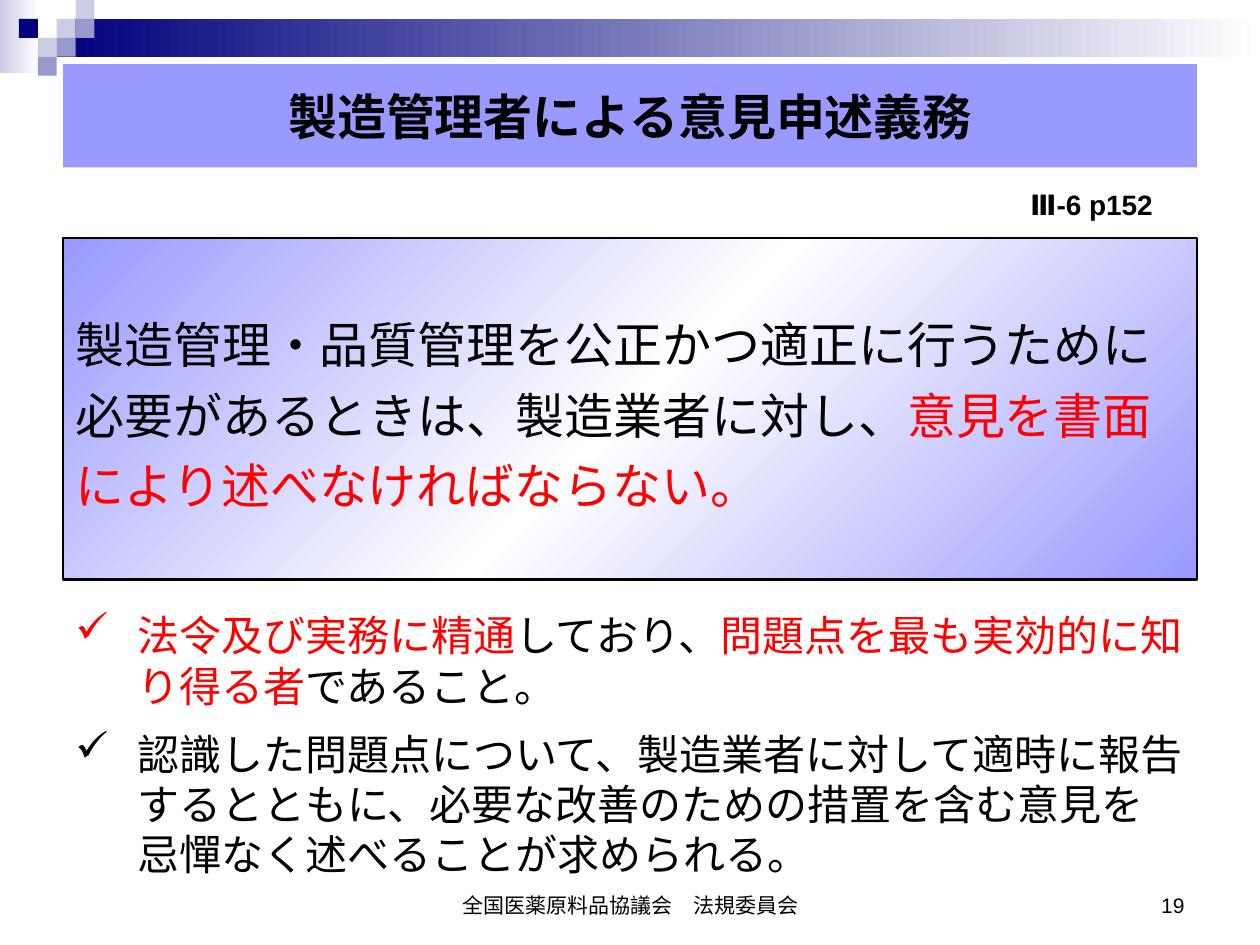
"""Build the slide on the manufacturing manager's duty to state opinions."""
from dataclasses import dataclass
from typing import Optional

import lxml.etree
import pptx
import pptx.dml.color
import pptx.enum.shapes
import pptx.enum.text
import pptx.oxml.ns
import pptx.util

RGBColor = pptx.dml.color.RGBColor
Align = pptx.enum.text.PP_ALIGN
Anchor = pptx.enum.text.MSO_ANCHOR

BLACK = RGBColor(0x00, 0x00, 0x00)
WHITE = RGBColor(0xFF, 0xFF, 0xFF)
RED = RGBColor(0xFF, 0x00, 0x00)
NAVY = RGBColor(0x00, 0x00, 0x7D)
PERIWINKLE = RGBColor(0x99, 0x99, 0xFF)
MIST = RGBColor(0xCC, 0xCC, 0xE6)
STEEL = RGBColor(0x99, 0x99, 0xCC)

FONT = "Arial"
SLIDE_WIDTH = pptx.util.Inches(10)
SLIDE_HEIGHT = pptx.util.Inches(7.5)
CELL_WIDTH, CELL_HEIGHT = 1.5, 2
MARGIN = 5
CONTENT_WIDTH = 100 - 2 * MARGIN
BULLET_INDENT = pptx.util.Inches(0.49)


@dataclass(frozen=True)
class Region:
    """A rectangle in percent of the slide's width and height."""
    left: float
    top: float
    width: float
    height: float

    def lengths(self) -> tuple[int, int, int, int]:
        """Return left, top, width and height as slide lengths."""
        return (int(SLIDE_WIDTH * self.left / 100), int(SLIDE_HEIGHT * self.top / 100),
                int(SLIDE_WIDTH * self.width / 100), int(SLIDE_HEIGHT * self.height / 100))


@dataclass(frozen=True)
class Tile:
    """One square of the corner mosaic, by column and row."""
    column: int
    row: int
    color: RGBColor


@dataclass(frozen=True)
class Span:
    """A stretch of text in one colour."""
    text: str
    color: RGBColor = BLACK


@dataclass(frozen=True)
class Style:
    """Formatting shared by the paragraphs of one box."""
    size: float
    bold: bool = False
    align: Align = Align.LEFT
    anchor: Anchor = Anchor.TOP
    space_before: float = 0
    line_spacing: Optional[float] = None
    bullet: str = ""


TILES = [Tile(3, 1, MIST), Tile(4, 0, MIST), Tile(4, 1, STEEL), Tile(2, 2, MIST),
         Tile(1, 1, NAVY), Tile(3, 2, STEEL), Tile(2, 3, STEEL)]
TITLE = [[Span("製造管理者による意見申述義務")]]
REFERENCE = [[Span("Ⅲ-6 p152")]]
DUTY = [[Span("製造管理・品質管理を公正かつ適正に行うために必要があるときは、製造業者に対し、"),
         Span("意見を書面により述べなければならない。", RED)]]
POINTS = [
    [Span("法令及び実務に精通", RED), Span("しており、"),
     Span("問題点を最も実効的に知り得る者", RED), Span("であること。")],
    [Span("認識した問題点について、製造業者に対して適時に報告するとともに、"
          "必要な改善のための措置を含む意見を忌憚なく述べることが求められる。")],
]
FOOTER = [[Span("全国医薬原料品協議会　法規委員会")]]
PAGE_NUMBER = [[Span("19")]]


def add_block(page, region: Region, colors: list[RGBColor], angle: int = 0):
    """Add a borderless rectangle in one colour or an even gradient."""
    box = page.shapes.add_shape(pptx.enum.shapes.MSO_SHAPE.RECTANGLE, *region.lengths())
    box.shadow.inherit = False
    box.line.fill.background()
    if len(colors) == 1:
        box.fill.solid()
        box.fill.fore_color.rgb = colors[0]
        return box
    box.fill.gradient()
    box.fill.gradient_angle = -angle % 360
    stops = next(box._element.spPr.iter(pptx.oxml.ns.qn("a:gsLst")))
    for stop in list(stops):
        stops.remove(stop)
    for index, color in enumerate(colors):
        position = str(100000 * index // (len(colors) - 1))
        stop = lxml.etree.SubElement(stops, pptx.oxml.ns.qn("a:gs"), pos=position)
        lxml.etree.SubElement(stop, pptx.oxml.ns.qn("a:srgbClr"), val=str(color))
    return box


def set_bullet(para, character: str) -> None:
    """Give a paragraph a hanging bullet."""
    properties = para._p.get_or_add_pPr()
    properties.set("marL", str(BULLET_INDENT))
    properties.set("indent", str(-BULLET_INDENT))
    lxml.etree.SubElement(properties, pptx.oxml.ns.qn("a:buChar"), char=character)


def write_text(box, paragraphs: list[list[Span]], style: Style) -> None:
    """Fill a shape with formatted paragraphs, run by run."""
    frame = box.text_frame
    frame.word_wrap = True
    frame.auto_size = pptx.enum.text.MSO_AUTO_SIZE.NONE
    frame.vertical_anchor = style.anchor
    for index, spans in enumerate(paragraphs):
        para = frame.add_paragraph() if index else frame.paragraphs[0]
        para.alignment = style.align
        para.space_before = pptx.util.Pt(style.space_before)
        if style.line_spacing:
            para.line_spacing = style.line_spacing
        if style.bullet:
            set_bullet(para, style.bullet)
        for span in spans:
            run = para.add_run()
            run.text = span.text
            run.font.name = FONT
            run.font.size = pptx.util.Pt(style.size)
            run.font.bold = style.bold
            run.font.color.rgb = span.color


def add_text(page, region: Region, paragraphs: list[list[Span]], style: Style):
    """Add a text box with formatted paragraphs."""
    box = page.shapes.add_textbox(*region.lengths())
    write_text(box, paragraphs, style)
    return box


def add_decoration(page) -> None:
    """Draw the gradient bars and the corner mosaic."""
    add_block(page, Region(0, 0, 3.1, 7.73), [MIST, WHITE])
    bar_left = 3 * CELL_WIDTH
    add_block(page, Region(bar_left, CELL_HEIGHT, 100 - bar_left, 2 * CELL_HEIGHT), [NAVY, WHITE])
    for tile in TILES:
        region = Region(tile.column * CELL_WIDTH, tile.row * CELL_HEIGHT, CELL_WIDTH, CELL_HEIGHT)
        add_block(page, region, [tile.color])


def add_title(page) -> None:
    """Place and format the title placeholder."""
    title = page.shapes.title
    region = Region(MARGIN, 6.8, CONTENT_WIDTH, 10.93)
    title.left, title.top, title.width, title.height = region.lengths()
    title.fill.solid()
    title.fill.fore_color.rgb = PERIWINKLE
    write_text(title, TITLE, Style(28, bold=True, align=Align.CENTER, anchor=Anchor.MIDDLE))


def main() -> None:
    """Assemble and save the deck."""
    deck = pptx.Presentation()
    deck.slide_width, deck.slide_height = SLIDE_WIDTH, SLIDE_HEIGHT
    page = deck.slides.add_slide(deck.slide_layouts[5])
    add_decoration(page)
    add_title(page)
    reference = add_text(page, Region(75.3, 19.2, 19.7, 4.93), REFERENCE,
                         Style(16, bold=True, align=Align.RIGHT))
    reference.text_frame.margin_right = pptx.util.Inches(0.35)
    duty = add_block(page, Region(MARGIN, 25.2, CONTENT_WIDTH, 36.13),
                     [PERIWINKLE, WHITE, PERIWINKLE], angle=45)
    duty.line.color.rgb = BLACK
    duty.line.width = pptx.util.Pt(1.5)
    write_text(duty, DUTY, Style(28, anchor=Anchor.MIDDLE, space_before=10, line_spacing=1.2))
    add_text(page, Region(MARGIN, 63.87, CONTENT_WIDTH, 30.13), POINTS,
             Style(24, space_before=10, bullet="✓"))
    add_text(page, Region(34.2, 91.07, 31.7, 6.67), FOOTER,
             Style(12, align=Align.CENTER, anchor=Anchor.BOTTOM))
    add_text(page, Region(71.7, 91.07, 23.3, 6.67), PAGE_NUMBER,
             Style(12, align=Align.RIGHT, anchor=Anchor.BOTTOM))
    deck.save("out.pptx")


if __name__ == "__main__":
    main()
